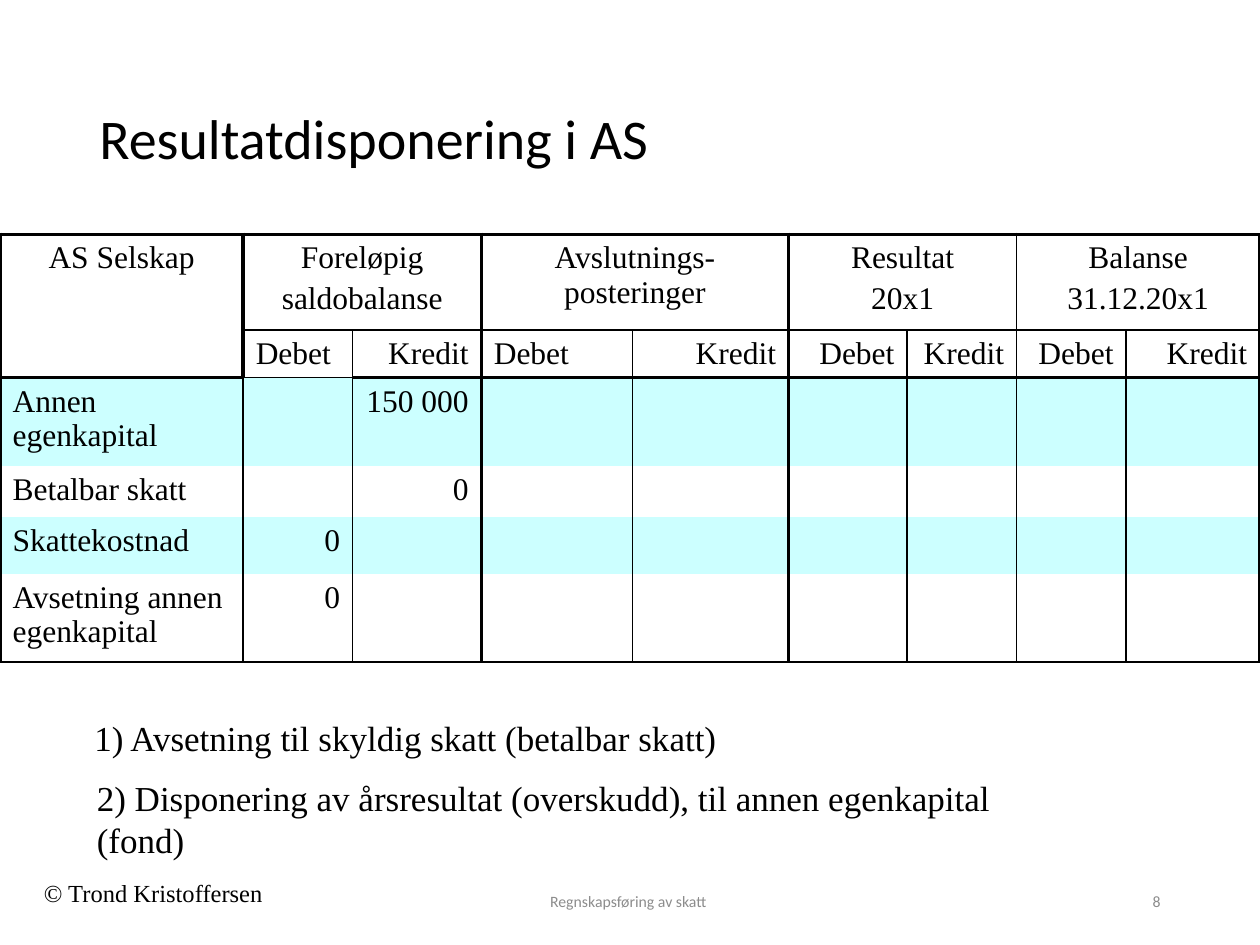
from dataclasses import dataclass

from lxml import etree
from pptx import Presentation
from pptx.dml.color import RGBColor
from pptx.enum import text
from pptx.oxml import ns
from pptx.util import Inches, Pt

BLACK = RGBColor(0x00, 0x00, 0x00)
GREY = RGBColor(0x8C, 0x8C, 0x8C)
AQUA = RGBColor(0xCC, 0xFF, 0xFF)
SERIF, SANS = "Times New Roman", "Calibri"
LEFT, CENTER, RIGHT = text.PP_ALIGN.LEFT, text.PP_ALIGN.CENTER, text.PP_ALIGN.RIGHT
TOP, MIDDLE = text.MSO_ANCHOR.TOP, text.MSO_ANCHOR.MIDDLE
THICK, THIN, NONE = 2.25, 1, 0

COLUMN_WIDTHS = [1.93, 0.87, 1.02, 1.2, 1.24, 0.94, 0.87, 0.87, 1.06]
ROW_HEIGHTS = [0.76, 0.34, 0.7, 0.39, 0.45, 0.7]
COLUMN_LINES = [THICK, THIN, THIN, THICK, THIN, THICK, THIN, THIN, THIN, THICK]
ROW_LINES = [THICK, THIN, THICK, NONE, NONE, NONE, THIN]
HEADER_ROWS = 2
SHADED_ROWS = (2, 4)


@dataclass
class Label:
    words: str
    left: float
    top: float
    width: float
    height: float
    size: float
    font: str = SERIF
    color: RGBColor = BLACK
    align: text.PP_ALIGN = LEFT
    anchor: text.MSO_ANCHOR = TOP
    line_spacing: float = 1.0


@dataclass
class Entry:
    row: int
    column: int
    lines: list[str]
    align: text.PP_ALIGN = LEFT


LABELS = [
    Label("© Trond Kristoffersen", 0.25, 6.92, 2.08, 0.33, 14),
    Label("Resultatdisponering i AS", 0.69, 0.4, 8.62, 1.45, 32, SANS,
          anchor=MIDDLE, line_spacing=0.9),
    Label("Regnskapsføring av skatt ", 3.31, 6.95, 3.38, 0.4, 9, SANS, GREY, CENTER, MIDDLE),
    Label("8", 7.06, 6.95, 2.25, 0.4, 9, SANS, GREY, RIGHT, MIDDLE),
    Label("1) Avsetning til skyldig skatt (betalbar skatt)", 0.65, 5.64, 5.3, 0.43, 20),
    Label("2) Disponering av årsresultat (overskudd), til annen egenkapital (fond)",
          0.67, 6.11, 8.03, 0.43, 20),
]

GROUPS = [
    ["Foreløpig", "saldobalanse"],
    ["Avslutnings-posteringer"],
    ["Resultat", "20x1"],
    ["Balanse", "31.12.20x1"],
]
ACCOUNTS = ["Annen egenkapital", "Betalbar skatt", "Skattekostnad", "Avsetning annen egenkapital"]
AMOUNTS = [(2, 2, "150 000"), (3, 2, "0"), (4, 1, "0"), (5, 1, "0")]


def add_span(para, words: str, size: float, font: str, color: RGBColor) -> None:
    span = para.add_run()
    span.text = words
    span.font.size = Pt(size)
    span.font.name = font
    span.font.color.rgb = color


def add_label(page, label: Label) -> None:
    box = page.shapes.add_textbox(Inches(label.left), Inches(label.top),
                                  Inches(label.width), Inches(label.height))
    frame = box.text_frame
    frame.word_wrap = True
    frame.vertical_anchor = label.anchor
    para = frame.paragraphs[0]
    para.alignment = label.align
    para.line_spacing = label.line_spacing
    add_span(para, label.words, label.size, label.font, label.color)


def table_entries() -> list[Entry]:
    entries = [Entry(0, 0, ["AS Selskap"], CENTER)]
    for index, lines in enumerate(GROUPS):
        debit = 1 + 2 * index
        entries.append(Entry(0, debit, lines, CENTER))
        entries.append(Entry(1, debit, ["Debet"], LEFT if index < 2 else RIGHT))
        entries.append(Entry(1, debit + 1, ["Kredit"], RIGHT))
    for row, account in enumerate(ACCOUNTS, HEADER_ROWS):
        entries.append(Entry(row, 0, [account]))
    entries += [Entry(row, column, [amount], RIGHT) for row, column, amount in AMOUNTS]
    return entries


def column_line(row: int, boundary: int) -> float:
    """Weight of a vertical rule; the one after the names is thick in the header only."""
    if boundary == 1 and row < HEADER_ROWS:
        return THICK
    return COLUMN_LINES[boundary]


def row_line(boundary: int, column: int) -> float:
    """Weight of a horizontal rule; the header rule is thin under the first debit."""
    if boundary == HEADER_ROWS and column == 1:
        return THIN
    return ROW_LINES[boundary]


def add_border(cell, side: str, weight: float) -> None:
    properties = cell._tc.get_or_add_tcPr()
    line = etree.SubElement(properties, ns.qn(f"a:ln{side}"), w=str(Pt(weight)))
    if weight == NONE:
        etree.SubElement(line, ns.qn("a:noFill"))
    else:
        fill = etree.SubElement(line, ns.qn("a:solidFill"))
        etree.SubElement(fill, ns.qn("a:srgbClr"), val=str(BLACK))


def format_cell(cell, row: int, column: int) -> None:
    right = column + cell.span_width if cell.is_merge_origin else column + 1
    bottom = row + cell.span_height if cell.is_merge_origin else row + 1
    add_border(cell, "L", column_line(row, column))
    add_border(cell, "R", column_line(row, right))
    add_border(cell, "T", row_line(row, column))
    add_border(cell, "B", row_line(bottom, column))
    if row in SHADED_ROWS:
        cell.fill.solid()
        cell.fill.fore_color.rgb = AQUA
    else:
        cell.fill.background()
    cell.text_frame.paragraphs[0].font.size = Pt(18)


def write_entry(table, entry: Entry) -> None:
    frame = table.cell(entry.row, entry.column).text_frame
    for index, words in enumerate(entry.lines):
        para = frame.add_paragraph() if index else frame.paragraphs[0]
        para.alignment = entry.align
        para.space_before = Pt(3.6)
        add_span(para, words, 18, SERIF, BLACK)


def add_ledger(page) -> None:
    frame = page.shapes.add_table(len(ROW_HEIGHTS), len(COLUMN_WIDTHS), Inches(0), Inches(1.86),
                                  Inches(sum(COLUMN_WIDTHS)), Inches(sum(ROW_HEIGHTS)))
    table = frame.table
    table.first_row = table.horz_banding = False
    for column, width in zip(table.columns, COLUMN_WIDTHS):
        column.width = Inches(width)
    for row, height in zip(table.rows, ROW_HEIGHTS):
        row.height = Inches(height)

    table.cell(0, 0).merge(table.cell(1, 0))
    for debit in range(1, len(COLUMN_WIDTHS), 2):
        table.cell(0, debit).merge(table.cell(0, debit + 1))
    for row in range(len(ROW_HEIGHTS)):
        for column in range(len(COLUMN_WIDTHS)):
            cell = table.cell(row, column)
            if not cell.is_spanned:
                format_cell(cell, row, column)
    for entry in table_entries():
        write_entry(table, entry)


def main() -> None:
    deck = Presentation()
    deck.slide_width, deck.slide_height = Inches(10), Inches(7.5)
    page = deck.slides.add_slide(deck.slide_layouts[6])
    add_ledger(page)
    for label in LABELS:
        add_label(page, label)
    deck.save("out.pptx")


if __name__ == "__main__":
    main()
